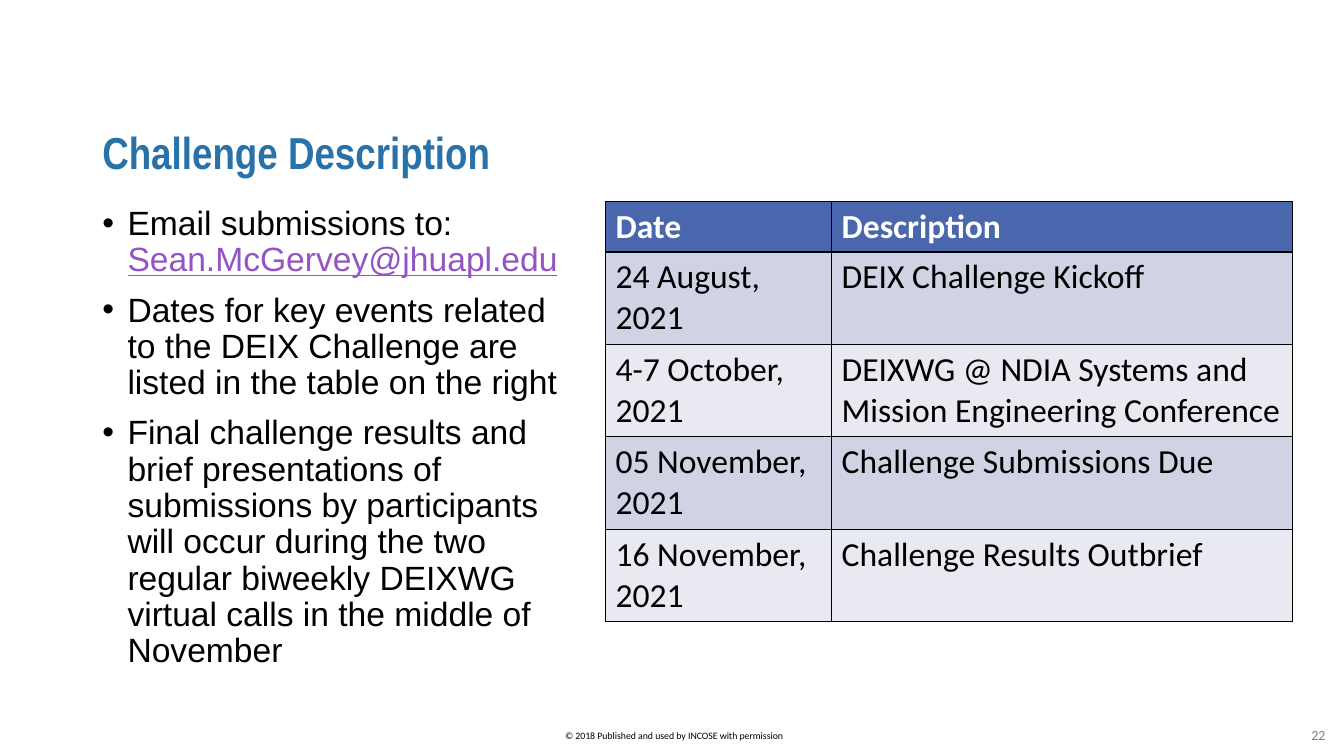
from collections import namedtuple
from dataclasses import dataclass

from lxml.etree import SubElement
from pptx import Presentation
from pptx.dml.color import RGBColor
from pptx.enum.text import MSO_ANCHOR as Anchor, PP_ALIGN as Align
from pptx.oxml.ns import qn
from pptx.util import Pt

Box = namedtuple("Box", "left top width height")


@dataclass(frozen=True)
class Theme:
    """Fonts, type sizes and colours of the slide."""
    title_font: str = "Arial Narrow"
    body_font: str = "Arial"
    table_font: str = "Calibri"
    title_size: int = 32
    text_size: int = 24
    number_size: int = 10
    copyright_size: int = 7
    title: str = "2971A9"
    text: str = "000000"
    email: str = "9454C3"
    number: str = "808080"
    header_text: str = "FFFFFF"
    header_fill: str = "4A66AC"
    band_fills: tuple = ("D0D3E3", "E9EAF1")
    border: str = "000000"


THEME = Theme()
BULLETS = [
    ["Email submissions to: ", "Sean.McGervey@jhuapl.edu"],
    ["Dates for key events related to the DEIX Challenge are listed in the table on the right"],
    ["Final challenge results and brief presentations of submissions by participants will occur "
     "during the two regular biweekly DEIXWG virtual calls in the middle of November"],
]
EVENTS = [
    ("Date", "Description"),
    ("24 August, 2021", "DEIX Challenge Kickoff"),
    ("4-7 October, 2021", "DEIXWG @ NDIA Systems and Mission Engineering Conference"),
    ("05 November, 2021", "Challenge Submissions Due"),
    ("16 November, 2021", "Challenge Results Outbrief"),
]


def style_font(font, name, size, color, bold=False):
    """Set the typeface, size, colour and weight of a font."""
    font.name, font.size, font.bold = name, Pt(size), bold
    font.color.rgb = RGBColor.from_string(color)


def add_frame(slide, box, anchor=Anchor.TOP):
    """Add a wrapping text box and return its text frame."""
    frame = slide.shapes.add_textbox(*map(Pt, box)).text_frame
    frame.word_wrap = True
    frame.vertical_anchor = anchor
    return frame


def add_label(slide, box, text, font_style, anchor=Anchor.MIDDLE, align=Align.CENTER):
    """Add a single line of text in the given box."""
    frame = add_frame(slide, box, anchor)
    frame.text = text
    paragraph = frame.paragraphs[0]
    paragraph.alignment = align
    paragraph.line_spacing = 0.9
    style_font(paragraph.runs[0].font, *font_style)


def add_bullets(slide, box):
    """Add the bulleted list, with the e-mail address underlined."""
    frame = add_frame(slide, box)
    for index, texts in enumerate(BULLETS):
        paragraph = frame.add_paragraph() if index else frame.paragraphs[0]
        paragraph.line_spacing = 0.9
        paragraph.space_before = Pt(10 if index else 0)
        properties = paragraph._p.get_or_add_pPr()
        properties.set("marL", str(Pt(18)))
        properties.set("indent", str(-Pt(18)))
        SubElement(properties, qn("a:buFont"), typeface=THEME.body_font)
        SubElement(properties, qn("a:buChar"), char="•")
        for text in texts:
            is_email = "@" in text
            run = paragraph.add_run()
            run.text = text
            style_font(run.font, THEME.body_font, THEME.text_size,
                       THEME.email if is_email else THEME.text)
            run.font.underline = is_email


def style_cell(cell, fill, color, bold):
    """Fill a cell, set its font and outline its four sides."""
    style_font(cell.text_frame.paragraphs[0].runs[0].font,
               THEME.table_font, THEME.text_size, color, bold)
    properties = cell._tc.get_or_add_tcPr()
    for side in ("lnL", "lnR", "lnT", "lnB"):
        line = SubElement(properties, qn(f"a:{side}"), w=str(Pt(1)))
        line_fill = SubElement(line, qn("a:solidFill"))
        SubElement(line_fill, qn("a:srgbClr"), val=THEME.border)
    cell.fill.solid()
    cell.fill.fore_color.rgb = RGBColor.from_string(fill)


def add_events(slide, box):
    """Add the table of key dates with a header and banded rows."""
    header_height, date_width = 36, 161.5
    row_height = (box.height - header_height) / (len(EVENTS) - 1)
    table = slide.shapes.add_table(len(EVENTS), 2, *map(Pt, box)).table
    table.columns[0].width = Pt(date_width)
    table.columns[1].width = Pt(box.width - date_width)
    for index, texts in enumerate(EVENTS):
        is_header = index == 0
        table.rows[index].height = Pt(header_height if is_header else row_height)
        fill = THEME.header_fill if is_header else THEME.band_fills[(index - 1) % 2]
        color = THEME.header_text if is_header else THEME.text
        for cell, text in zip(table.rows[index].cells, texts):
            cell.text = text
            style_cell(cell, fill, color, is_header)


def add_footer(slide, box):
    """Add the centred copyright line and the slide number at the right."""
    add_label(slide, Box(box.left + 346.5, box.top + 6.5, 270, 16),
              "© 2018 Published and used by INCOSE with permission",
              (THEME.table_font, THEME.copyright_size, THEME.text), Anchor.TOP)
    add_label(slide, Box(box.left + box.width - 36.5, box.top, 36.5, box.height), "22",
              (THEME.table_font, THEME.number_size, THEME.number))


def main():
    """Build the slide and save it."""
    presentation = Presentation()
    presentation.slide_width, presentation.slide_height = Pt(960), Pt(540)
    slide = presentation.slides.add_slide(presentation.slide_layouts[6])
    add_label(slide, Box(66, 84, 840, 54), "Challenge Description",
              (THEME.title_font, THEME.title_size, THEME.title, True), align=Align.LEFT)
    add_bullets(slide, Box(66, 144, 348, 366.5))
    add_events(slide, Box(432.5, 144, 491, 300))
    add_footer(slide, Box(0, 512, 960, 28))
    presentation.save("out.pptx")


if __name__ == "__main__":
    main()
